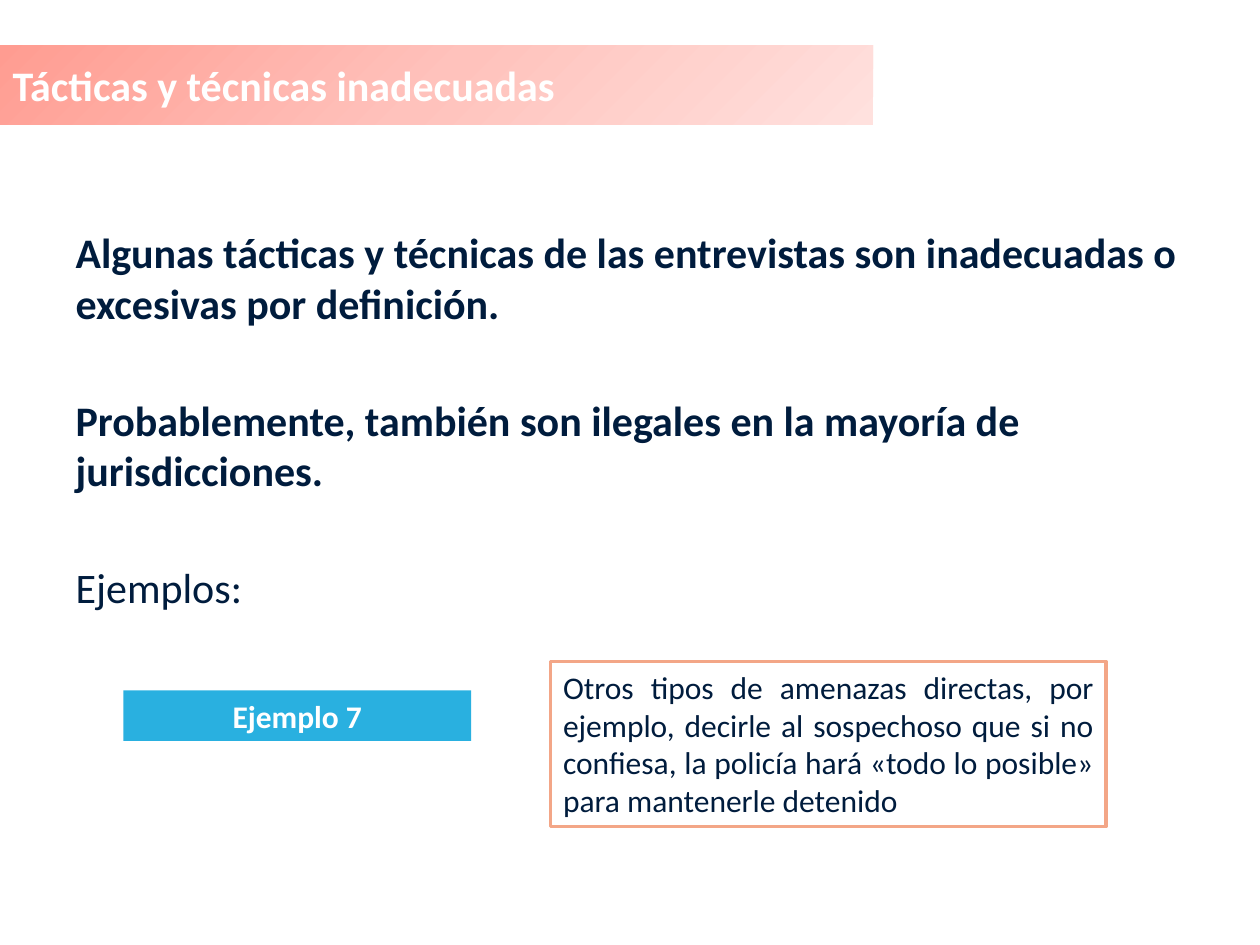
from lxml import etree
from pptx import Presentation
from pptx.dml.color import RGBColor as Color
from pptx.enum.shapes import MSO_SHAPE as Shape
from pptx.enum.text import MSO_ANCHOR as Anchor, MSO_AUTO_SIZE as AutoSize, PP_ALIGN as Align
from pptx.oxml import parse_xml
from pptx.oxml.ns import nsdecls, qn
from pptx.util import Inches, Pt

COLORS = {"navy": "001C3D", "white": "FFFFFF", "blue": "00A2DB", "salmon": "F3A687"}
BANNER_STOPS = {0: "FF9C91", 50: "FFC2BC", 100: "FFE1DE"}


def place(box, left, top, width, height):
    box.left, box.top = Inches(left), Inches(top)
    box.width, box.height = Inches(width), Inches(height)


def style(para, size, color, bold, align):
    para.alignment = align
    for span in para.runs:
        span.font.name = "Calibri"
        span.font.size = Pt(size)
        span.font.bold = bold
        span.font.color.rgb = Color.from_string(COLORS[color])


deck = Presentation()
deck.slide_width, deck.slide_height = Inches(10), Inches(7.5)
page = deck.slides.add_slide(deck.slide_layouts[1])

banner = page.shapes.title
place(banner, 0, 0.36, 6.93, 0.63)
banner.text_frame.text = "Tácticas y técnicas inadecuadas"
banner.text_frame.vertical_anchor = Anchor.MIDDLE
banner.text_frame.auto_size = AutoSize.NONE
style(banner.text_frame.paragraphs[0], 24, "white", True, Align.LEFT)
stops = "".join(
    f'<a:gs pos="{share * 1000}"><a:srgbClr val="{color}"/></a:gs>'
    for share, color in BANNER_STOPS.items()
)
banner_look = banner.element.spPr
banner_look.append(parse_xml(
    f'<a:prstGeom {nsdecls("a")} prst="homePlate"><a:avLst/></a:prstGeom>'
))
banner_look.append(parse_xml(
    f'<a:gradFill {nsdecls("a")} rotWithShape="1"><a:gsLst>{stops}</a:gsLst>'
    '<a:path path="circle"><a:fillToRect r="100000" b="100000"/></a:path></a:gradFill>'
))

body = page.placeholders[1]
place(body, 0.5, 1.75, 9, 3.42)
body.text_frame.text = "\n".join([
    "Algunas tácticas y técnicas de las entrevistas son inadecuadas o excesivas por definición.",
    "Probablemente, también son ilegales en la mayoría de jurisdicciones.",
    "Ejemplos:",
])
body.text_frame.auto_size = AutoSize.NONE
for index, para in enumerate(body.text_frame.paragraphs):
    style(para, 24, "navy", index < 2, Align.LEFT)
    para.space_before = Pt(38 if index else 4.8)
    settings = para._p.get_or_add_pPr()
    settings.set("marL", "0")
    settings.set("indent", "0")
    etree.SubElement(settings, qn("a:buNone"))

examples = [
    ("Ejemplo 7", (0.98, 5.48, 2.76, 0.4), "blue", None, "white", True, Align.CENTER),
    ("Otros tipos de amenazas directas, por ejemplo, decirle al sospechoso que si no "
     "confiesa, la policía hará «todo lo posible» para mantenerle detenido",
     (4.37, 5.25, 4.41, 1.31), "white", "salmon", "navy", False, Align.JUSTIFY),
]
for text, spot, fill, line, color, bold, align in examples:
    box = page.shapes.add_shape(Shape.RECTANGLE, *map(Inches, spot))
    box.shadow.inherit = False
    box.fill.solid()
    box.fill.fore_color.rgb = Color.from_string(COLORS[fill])
    if line:
        box.line.color.rgb = Color.from_string(COLORS[line])
        box.line.width = Pt(2)
    else:
        box.line.fill.background()
        tint = box.element.spPr.find(qn("a:solidFill"))[0]
        etree.SubElement(tint, qn("a:alpha"), val="84000")
    frame = box.text_frame
    frame.text = text
    frame.word_wrap = True
    frame.vertical_anchor = Anchor.TOP
    frame.auto_size = AutoSize.SHAPE_TO_FIT_TEXT
    style(frame.paragraphs[0], 18, color, bold, align)

deck.save("out.pptx")
